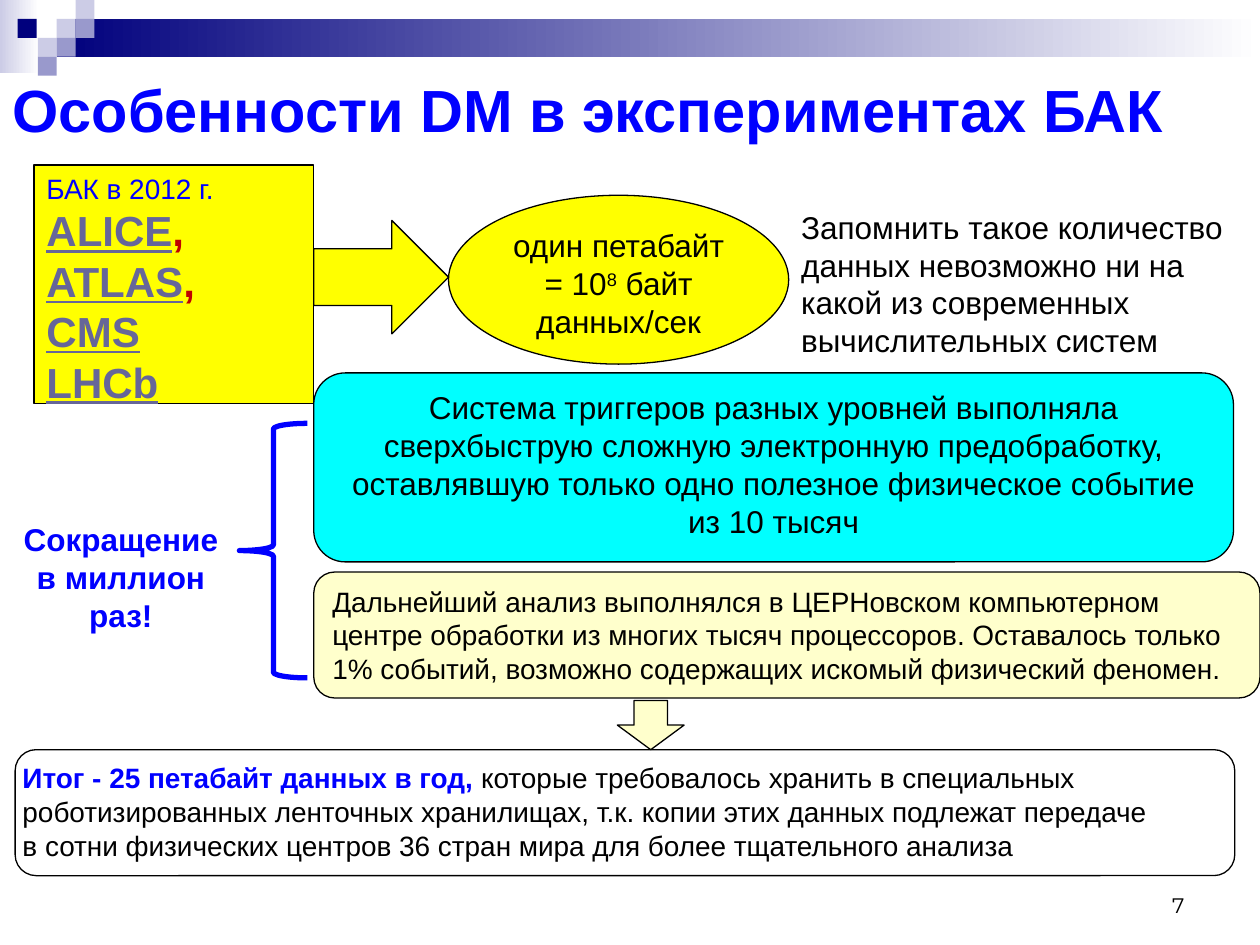
from pptx import Presentation
from pptx.dml.color import RGBColor
from pptx.enum.shapes import MSO_SHAPE
from pptx.enum.text import MSO_ANCHOR, PP_ALIGN
from pptx.util import Inches, Pt

RECT, ROUND, OVAL = MSO_SHAPE.RECTANGLE, MSO_SHAPE.ROUNDED_RECTANGLE, MSO_SHAPE.OVAL
RIGHT_ARROW, DOWN_ARROW = MSO_SHAPE.RIGHT_ARROW, MSO_SHAPE.DOWN_ARROW
BRACE = MSO_SHAPE.LEFT_BRACE
LEFT, CENTER, RIGHT = PP_ALIGN.LEFT, PP_ALIGN.CENTER, PP_ALIGN.RIGHT
TOP, MIDDLE, BOTTOM = MSO_ANCHOR.TOP, MSO_ANCHOR.MIDDLE, MSO_ANCHOR.BOTTOM

BLACK, BLUE, RED, LINK = "000000", "0000FF", "C00000", "666699"
YELLOW, CYAN, CREAM = "FFFF00", "00FFFF", "FFFFCC"
NAVY, LILAC, PALE, WHITE = "00007D", "9999CC", "CCCCE6", "FFFFFF"

TILE = 0.15
TILES = [(0.45, 0.15, PALE), (0.6, 0, PALE), (0.6, 0.15, LILAC), (0.3, 0.3, PALE),
         (0.14, 0.15, NAVY), (0.45, 0.3, LILAC), (0.3, 0.45, LILAC)]
EXPERIMENTS = [("ALICE", ","), ("ATLAS", ","), ("CMS", ""), ("LHCb", "")]


def rgb(value):
    """Return the colour for a hex string."""
    return RGBColor.from_string(value)


def set_font(font, size, color=BLACK, bold=False, name="Arial"):
    """Set the look of a paragraph or run font."""
    font.name, font.size, font.bold = name, Pt(size), bold
    font.color.rgb = rgb(color)


def add_shape(slide, kind, box, fill=None, line=BLACK, width=0.75):
    """Add a preset shape with a plain fill and outline."""
    sp = slide.shapes.add_shape(kind, *map(Inches, box))
    sp.shadow.inherit = False
    if fill:
        sp.fill.solid()
        sp.fill.fore_color.rgb = rgb(fill)
    else:
        sp.fill.background()
    if line:
        sp.line.color.rgb = rgb(line)
        sp.line.width = Pt(width)
    else:
        sp.line.fill.background()
    return sp


def add_band(slide, box, start):
    """Add a header band that fades from a colour to white."""
    sp = add_shape(slide, RECT, box, line=None)
    sp.fill.gradient()
    sp.fill.gradient_angle = 0
    for stop, color in zip(sp.fill.gradient_stops, (start, WHITE)):
        stop.color.rgb = rgb(color)


def add_text_box(slide, box, wrap=True):
    """Add a text box."""
    sp = slide.shapes.add_textbox(*map(Inches, box))
    sp.text_frame.word_wrap = wrap
    return sp


def write(sp, lines, size, color=BLACK, bold=False, align=LEFT, anchor=TOP, name="Arial"):
    """Fill a shape with one paragraph per line and return the paragraphs."""
    tf = sp.text_frame
    tf.vertical_anchor = anchor
    tf.text = "\n".join(lines)
    for p in tf.paragraphs:
        p.alignment = align
        set_font(p.font, size, color, bold, name)
    return tf.paragraphs


def add_run(p, text):
    """Append a run to a paragraph."""
    r = p.add_run()
    r.text = text
    return r


def add_header(slide):
    """Draw the header bands and tiles and write the title."""
    add_band(slide, (0, 0, 0.31, 0.58), PALE)
    add_band(slide, (0.45, 0.15, 9.55, 0.3), NAVY)
    for x, y, color in TILES:
        add_shape(slide, RECT, (x, y, TILE, TILE), color, None)
    title = slide.shapes.title
    title.left, title.top, title.width, title.height = map(Inches, (0, 0.5, 10, 0.73))
    write(title, ["Особенности DM в экспериментах БАК"], 34, BLUE, True, anchor=MIDDLE)


def add_experiments(slide):
    """Add the list of experiments."""
    sp = add_shape(slide, RECT, (0.27, 1.31, 2.22, 1.89), YELLOW)
    write(sp, ["БАК в 2012 г."], 16, BLUE)
    for name, mark in EXPERIMENTS:
        p = sp.text_frame.add_paragraph()
        p.alignment = LEFT
        set_font(p.font, 24, RED, True)
        r = add_run(p, name)
        r.font.underline = True
        r.font.color.rgb = rgb(LINK)
        if mark:
            add_run(p, mark)


def add_data_rate(slide):
    """Add the data rate ellipse with its exponent."""
    sp = add_shape(slide, OVAL, (3.56, 1.55, 2.7, 1.34), YELLOW)
    p = write(sp, ["один петабайт", "= 10", "данных/сек"], 18, align=CENTER)[1]
    add_run(p, "8")._r.get_or_add_rPr().set("baseline", "30000")
    add_run(p, " байт")


def add_result(slide):
    """Add the framed result at the bottom."""
    add_shape(slide, ROUND, (0.12, 5.95, 9.68, 1))
    sp = add_text_box(slide, (0.08, 5.99, 9.72, 0.91))
    p = write(sp, ["", "роботизированных ленточных хранилищах, т.к. копии этих данных подлежат передаче",
                   "в сотни физических центров 36 стран мира для более тщательного анализа"], 16)[0]
    set_font(add_run(p, "Итог - 25 петабайт данных в год, ").font, 16, BLUE, True)
    add_run(p, "которые требовалось хранить в специальных")


def main():
    """Build the slide and save it."""
    prs = Presentation()
    prs.slide_width, prs.slide_height = Inches(10), Inches(7.5)
    slide = prs.slides.add_slide(prs.slide_layouts[5])
    add_header(slide)
    write(add_text_box(slide, (7.17, 6.83, 2.33, 0.5)), ["7"], 12,
          align=RIGHT, anchor=BOTTOM, name="Montserrat")

    add_shape(slide, RIGHT_ARROW, (2.49, 1.75, 1.07, 0.9), YELLOW)
    add_experiments(slide)
    add_data_rate(slide)
    write(add_text_box(slide, (6.26, 1.6, 3.62, 1.31)),
          ["Запомнить такое количество данных невозможно ни на какой "
           "из современных вычислительных систем"], 18)

    triggers = add_shape(slide, ROUND, (2.49, 2.96, 7.3, 1.5), CYAN)
    write(triggers, ["Система триггеров разных уровней выполняла сверхбыструю сложную "
                     "электронную предобработку, оставлявшую только одно полезное "
                     "физическое событие из 10 тысяч"], 18, align=CENTER)
    analysis = add_shape(slide, ROUND, (2.49, 4.54, 7.51, 1), CREAM)
    write(analysis, ["Дальнейший анализ выполнялся в ЦЕРНовском компьютерном центре "
                     "обработки из многих тысяч процессоров. Оставалось только 1% "
                     "событий, возможно содержащих искомый физический феномен."], 16)

    add_shape(slide, BRACE, (1.9, 3.36, 0.54, 2.02), line=BLUE, width=3)
    write(add_text_box(slide, (0.08, 4.08, 1.76, 1.01), False),
          ["Сокращение", "в миллион", "раз!"], 18, BLUE, True, CENTER)
    add_result(slide)
    add_shape(slide, DOWN_ARROW, (4.9, 5.56, 0.53, 0.39), CREAM)
    prs.save("out.pptx")


if __name__ == "__main__":
    main()
